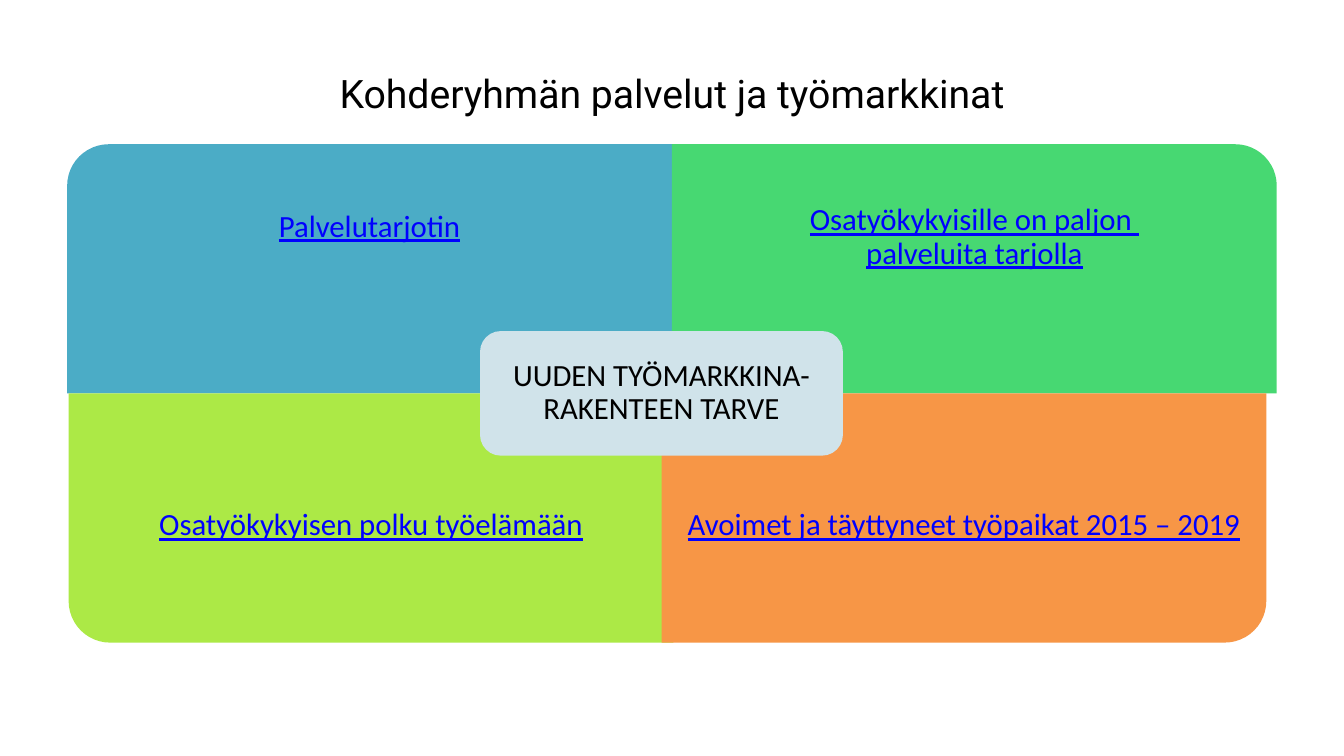
from dataclasses import dataclass

from pptx import Presentation
from pptx.dml.color import RGBColor
from pptx.enum import shapes, text
from pptx.util import Pt


@dataclass(frozen=True)
class Theme:
    """Colours, fonts and type sizes of the slide."""
    ink: str = "000000"
    link: str = "0000FF"
    blue: str = "4BACC6"
    green: str = "47D872"
    lime: str = "ACE946"
    orange: str = "F79646"
    pale: str = "D0E3EA"
    title_font: str = "Roboto"
    body_font: str = "Calibri"
    title_size: int = 28
    body_size: int = 22


THEME = Theme()


def add_filled(s, kind, box, colour):
    """Add a flat preset shape without outline."""
    sp = s.shapes.add_shape(kind, *map(Pt, box))
    sp.shadow.inherit = False
    sp.fill.solid()
    sp.fill.fore_color.rgb = RGBColor.from_string(colour)
    sp.line.fill.background()
    return sp


def set_text(sp, words, font, size, colour, underline=None, inset=12, spacing=0.9):
    """Write one centred paragraph in the middle of a shape."""
    tf = sp.text_frame
    tf.word_wrap = True
    tf.vertical_anchor = text.MSO_ANCHOR.MIDDLE
    tf.margin_left = tf.margin_right = tf.margin_top = tf.margin_bottom = Pt(inset)
    p = tf.paragraphs[0]
    p.text = words
    p.alignment = text.PP_ALIGN.CENTER
    p.line_spacing = spacing
    p.font.name = font
    p.font.size = Pt(size)
    p.font.color.rgb = RGBColor.from_string(colour)
    p.font.underline = underline


def add_title(s, box, words):
    """Add the slide heading."""
    sp = s.shapes.add_textbox(*map(Pt, box))
    set_text(sp, words, THEME.title_font, THEME.title_size, THEME.ink, spacing=1.0)


def add_panel(s, box, rotation, colour, words, rise):
    """Add a quadrant with one round corner and a label in its outer three quarters."""
    x, y, w, h = box
    sideways = rotation in (90, 270)
    sw, sh = (h, w) if sideways else (w, h)
    outline = (x + (w - sw) / 2, y + (h - sh) / 2, sw, sh)
    sp = add_filled(s, shapes.MSO_SHAPE.ROUND_1_RECTANGLE, outline, colour)
    sp.rotation = rotation
    is_lower = rotation in (90, 180)
    label_y = y + (h / 4 if is_lower else 0) - rise
    label = s.shapes.add_textbox(Pt(x), Pt(label_y), Pt(w), Pt(h * 0.75))
    set_text(label, words, THEME.body_font, THEME.body_size, THEME.link, underline=True)


def add_core(s, box, words):
    """Add the rounded box in the middle."""
    sp = add_filled(s, shapes.MSO_SHAPE.ROUNDED_RECTANGLE, box, THEME.pale)
    set_text(sp, words, THEME.body_font, THEME.body_size, THEME.ink, inset=11)


def add_matrix(s, box):
    """Add the four quadrants and the box over their meeting point."""
    x, y, w, h = box
    pw, ph = w / 2, h / 2
    panels = [
        (0, 0, 270, THEME.blue, "Palvelutarjotin", 7),
        (pw, 0, 0, THEME.green, "Osatyökykyisille on paljon \vpalveluita tarjolla", 0),
        (1, ph, 180, THEME.lime, "Osatyökykyisen polku työelämään", 16.5),
        (pw - 7.5, ph, 90, THEME.orange,
         "Avoimet ja täyttyneet työpaikat 2015 – 2019", 16.5),
    ]
    for dx, dy, rotation, colour, words, rise in panels:
        add_panel(s, (x + dx, y + dy, pw, ph), rotation, colour, words, rise)
    cw, ch = w * 0.3, h / 4
    add_core(s, (x + (w - cw) / 2 - 7.5, y + (h - ch) / 2, cw, ch),
             "UUDEN TYÖMARKKINA-RAKENTEEN TARVE")


def main():
    """Build the slide and save it."""
    prs = Presentation()
    prs.slide_width, prs.slide_height = Pt(960), Pt(540)
    s = prs.slides.add_slide(prs.slide_layouts[6])
    add_title(s, (48, 21.6, 864, 90), "Kohderyhmän palvelut ja työmarkkinat")
    add_matrix(s, (48, 103, 864, 356))
    prs.save("out.pptx")


if __name__ == "__main__":
    main()
